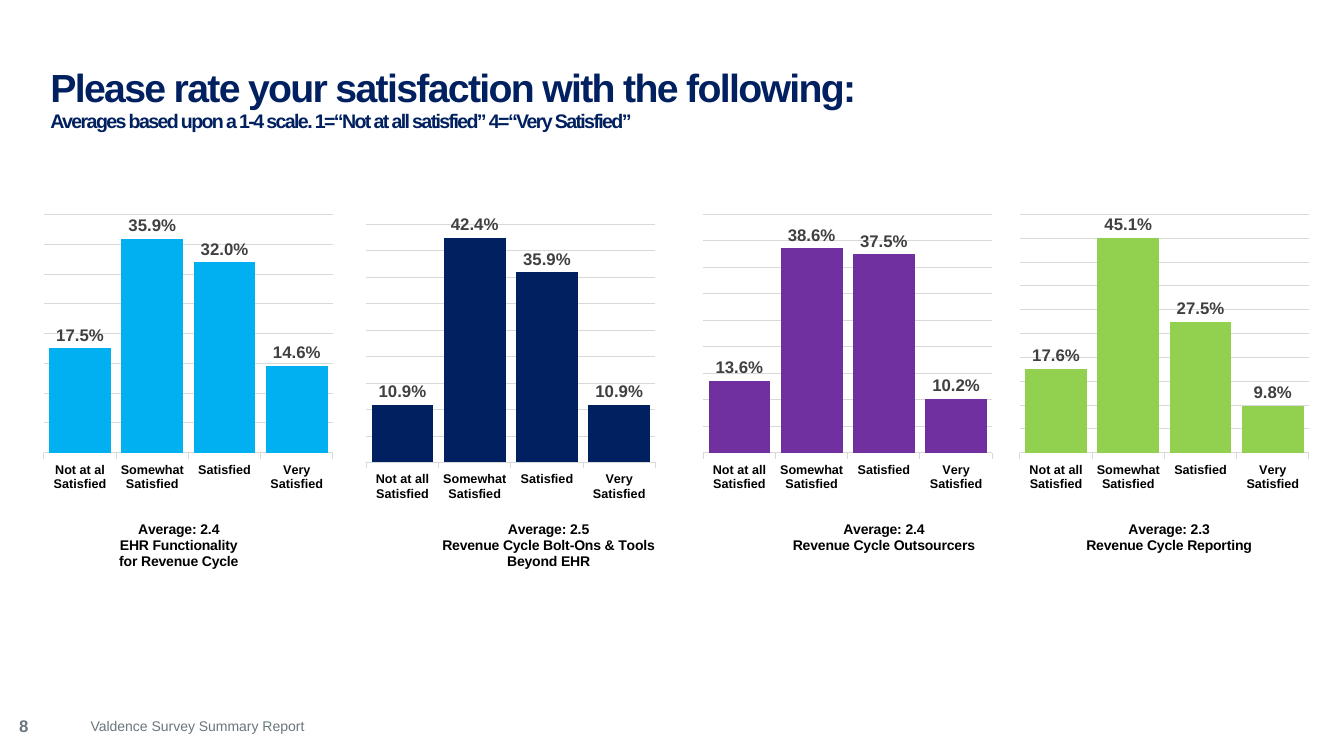
import dataclasses
import typing

import lxml.etree
import pptx
import pptx.chart.data
import pptx.dml.color
import pptx.enum.chart
import pptx.enum.text
import pptx.oxml.ns
import pptx.util

WIDTH = pptx.util.Inches(13.33)
HEIGHT = pptx.util.Inches(7.5)
FONT = "Arial"
COLORS = {
    "navy": "002060",
    "blue": "00B0F0",
    "purple": "7030A0",
    "green": "92D050",
    "footer": "69767D",
    "label": "404040",
    "grid": "D9D9D9",
    "black": "000000",
}
PLOT_WIDTH, PLOT_HEIGHT = 97.5, 53.6
CAPTION_TOP = 69.2


@dataclasses.dataclass(frozen=True)
class Box:
    """Shares of the slide's size, in percent."""
    left: float
    top: float
    width: float
    height: float

    def emu(self) -> tuple[int, int, int, int]:
        return (
            round(WIDTH * self.left / 100),
            round(HEIGHT * self.top / 100),
            round(WIDTH * self.width / 100),
            round(HEIGHT * self.height / 100),
        )


@dataclasses.dataclass(frozen=True)
class Rating:
    left: float
    color: str
    values: tuple[float, ...]
    axis_max: float
    caption: tuple[str, ...]
    caption_left: float
    first_category: str = "Not at all Satisfied"
    plot_left: float = 1.2
    plot_top: float = 1.1


RATINGS = (
    Rating(3, "blue", (0.175, 0.359, 0.32, 0.146), 0.4,
           ("Average: 2.4", "EHR Functionality", "for Revenue Cycle"), 25.6,
           first_category="Not at al Satisfied"),
    Rating(27.08, "navy", (0.109, 0.424, 0.359, 0.109), 0.45,
           ("Average: 2.5", "Revenue Cycle Bolt-Ons & Tools", "Beyond EHR"), 25.4,
           plot_left=0.8, plot_top=3.3),
    Rating(52.06, "purple", (0.136, 0.386, 0.375, 0.102), 0.45,
           ("Average: 2.4", "Revenue Cycle Outsourcers"), 30.4),
    Rating(75.62, "green", (0.176, 0.451, 0.275, 0.098), 0.5,
           ("Average: 2.3", "Revenue Cycle Reporting"), 22.6),
)


def rgb(name: str) -> pptx.dml.color.RGBColor:
    return pptx.dml.color.RGBColor.from_string(COLORS[name])


def set_font(font: typing.Any, size: float, color: str, bold: bool = False) -> None:
    font.name = FONT
    font.size = pptx.util.Pt(size)
    font.bold = bold
    font.color.rgb = rgb(color)


def write(p: typing.Any, text: str, *, size: float, color: str,
          bold: bool = False, spacing: int = 0) -> None:
    r = p.add_run()
    r.text = text
    set_font(r.font, size, color, bold)
    if spacing:
        r.font._element.set("spc", str(spacing))


def add_box(slide: typing.Any, box: Box) -> typing.Any:
    tf = slide.shapes.add_textbox(*box.emu()).text_frame
    tf.word_wrap = True
    return tf


def place(parent: typing.Any, inner: bool = False, **shares: float) -> None:
    qn = pptx.oxml.ns.qn
    layout = parent.find(qn("c:layout"))
    if layout is None:
        layout = lxml.etree.Element(qn("c:layout"))
        parent.insert(0, layout)
    manual = lxml.etree.SubElement(layout, qn("c:manualLayout"))
    settings = {"layoutTarget": "inner"} if inner else {}
    settings |= {"xMode": "edge", "yMode": "edge"}
    settings |= {key: f"{share / 100:.3f}" for key, share in shares.items()}
    for key, val in settings.items():
        lxml.etree.SubElement(manual, qn(f"c:{key}")).set("val", val)


def add_rating(slide: typing.Any, rating: Rating) -> None:
    data = pptx.chart.data.CategoryChartData(number_format="0.0%")
    data.categories = (rating.first_category, "Somewhat Satisfied",
                       "Satisfied", "Very Satisfied")
    data.add_series("Series 1", rating.values)
    chart = slide.shapes.add_chart(
        pptx.enum.chart.XL_CHART_TYPE.COLUMN_CLUSTERED,
        *Box(rating.left, 27.73, 22.06, 58.8).emu(), data).chart
    chart.has_legend = False
    chart.has_title = False
    set_font(chart.font, 10, "black")

    plot = chart.plots[0]
    plot.gap_width = 17
    plot.overlap = -27
    plot.vary_by_categories = False
    fill = plot.series[0].format.fill
    fill.solid()
    fill.fore_color.rgb = rgb(rating.color)
    plot.has_data_labels = True
    labels = plot.data_labels
    labels.show_value = True
    labels.number_format = "0.0%"
    labels.number_format_is_linked = False
    labels.position = pptx.enum.chart.XL_LABEL_POSITION.OUTSIDE_END
    set_font(labels.font, 12, "label", True)

    values = chart.value_axis
    values.minimum_scale = 0
    values.maximum_scale = rating.axis_max
    values.major_unit = 0.05
    values.visible = False
    values.has_major_gridlines = True
    categories = chart.category_axis
    categories.major_tick_mark = pptx.enum.chart.XL_TICK_MARK.OUTSIDE
    set_font(categories.tick_labels.font, 9, "black", True)
    for line in (values.major_gridlines.format.line, categories.format.line):
        line.color.rgb = rgb("grid")
        line.width = pptx.util.Pt(0.75)

    title = categories.axis_title
    tf = title.text_frame
    for i, text in enumerate(rating.caption):
        p = tf.add_paragraph() if i else tf.paragraphs[0]
        p.alignment = pptx.enum.text.PP_ALIGN.CENTER
        write(p, text, size=10, color="black", bold=True)
    place(title._element, x=rating.caption_left, y=CAPTION_TOP)
    place(chart._chartSpace.chart.plotArea, inner=True, x=rating.plot_left,
          y=rating.plot_top, w=PLOT_WIDTH, h=PLOT_HEIGHT)


def main() -> None:
    prs = pptx.Presentation()
    prs.slide_width, prs.slide_height = WIDTH, HEIGHT
    slide = prs.slides.add_slide(prs.slide_layouts[6])

    tf = add_box(slide, Box(0.68, 94, 3.38, 4))
    write(tf.paragraphs[0], "8", size=12, color="footer", bold=True)
    tf = add_box(slide, Box(6, 94.27, 73.14, 3.6))
    write(tf.paragraphs[0], "Valdence Survey Summary Report", size=10, color="footer")

    tf = add_box(slide, Box(3.75, 6.67, 92.27, 13.33))
    tf.margin_left = tf.margin_top = tf.margin_right = tf.margin_bottom = 0
    tf.vertical_anchor = pptx.enum.text.MSO_ANCHOR.MIDDLE
    p = tf.paragraphs[0]
    p.line_spacing = 0.9
    write(p, "Please rate your satisfaction with the following:",
          size=28, color="navy", bold=True, spacing=-120)
    p.add_line_break()
    write(p, "Averages based upon a 1-4 scale. 1=“Not at all satisfied” 4=“Very Satisfied”",
          size=14, color="navy", bold=True, spacing=-120)

    for rating in RATINGS:
        add_rating(slide, rating)
    prs.save("out.pptx")


if __name__ == "__main__":
    main()
